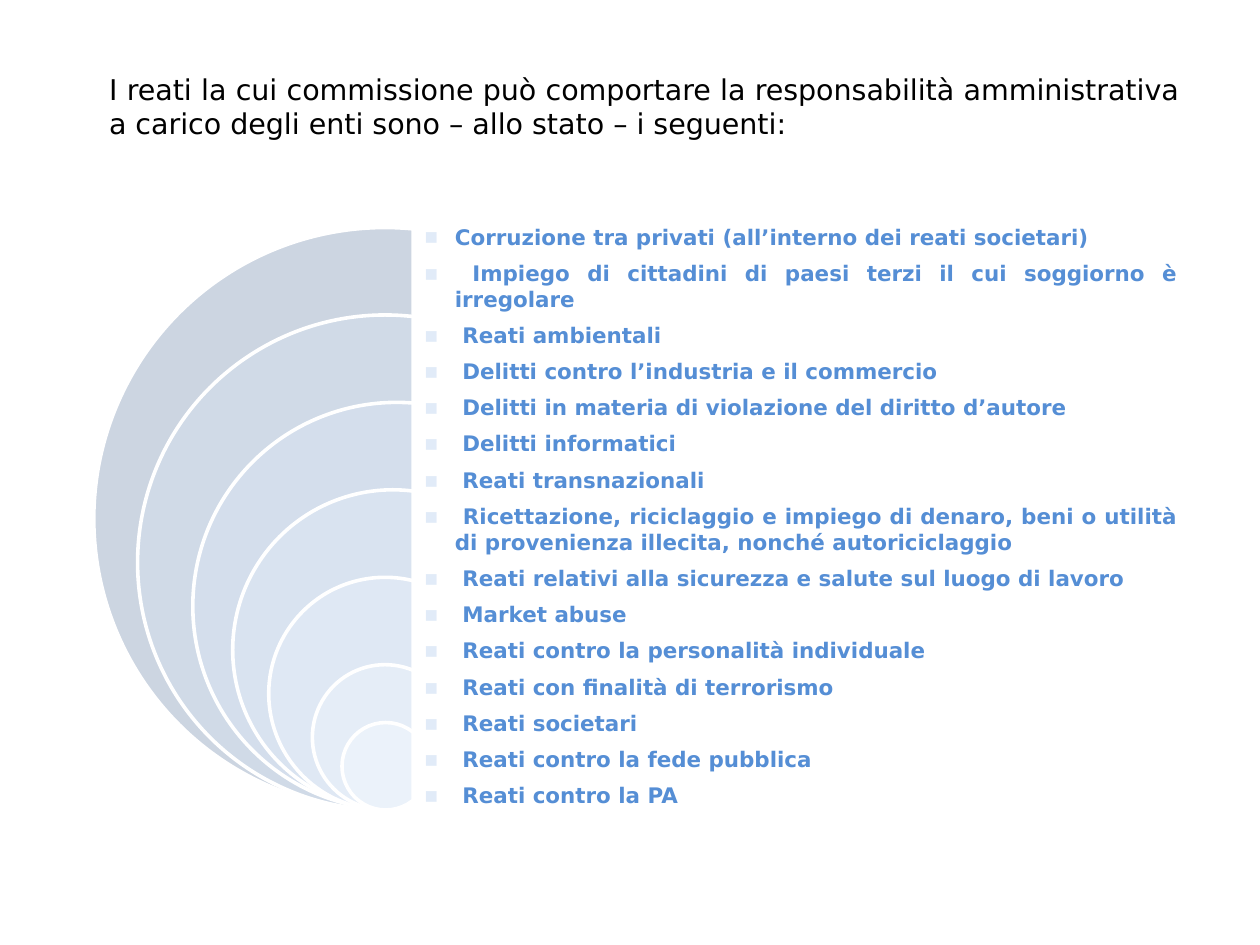
from typing import NamedTuple

from lxml.etree import SubElement
from pptx import Presentation
from pptx.dml.color import RGBColor
from pptx.enum.shapes import MSO_SHAPE
from pptx.enum.text import MSO_ANCHOR, MSO_AUTO_SIZE, PP_ALIGN
from pptx.oxml.ns import qn
from pptx.util import Emu, Pt

PX = 9144  # EMU in one px, 100 px to the inch
FONT = "DejaVu Sans"
BLACK = RGBColor(0x00, 0x00, 0x00)
WHITE = RGBColor(0xFF, 0xFF, 0xFF)
BLUE = RGBColor(0x55, 0x8E, 0xD5)
BULLET = RGBColor(0xE1, 0xEB, 0xF8)
BASE = 630  # all rings touch this line
INDENT = 24

TITLE = (
    "I reati la cui commissione può comportare la responsabilità "
    "amministrativa a carico degli enti sono – allo stato – i seguenti:"
)
CRIMES = (
    "Corruzione tra privati (all’interno dei reati societari)",
    " Impiego di cittadini di paesi terzi il cui soggiorno è irregolare",
    " Reati ambientali",
    " Delitti contro l’industria e il commercio",
    " Delitti in materia di violazione del diritto d’autore",
    " Delitti informatici",
    " Reati transnazionali",
    " Ricettazione, riciclaggio e impiego di denaro, beni o utilità "
    "di provenienza illecita, nonché autoriciclaggio",
    " Reati relativi alla sicurezza e salute sul luogo di lavoro",
    " Market abuse",
    " Reati contro la personalità individuale",
    " Reati con finalità di terrorismo",
    " Reati societari",
    " Reati contro la fede pubblica",
    " Reati contro la PA",
)


class Ring(NamedTuple):
    left: int
    size: int
    fill: RGBColor


RINGS = (
    Ring(73, 453, RGBColor(0xCC, 0xD5, 0xE1)),
    Ring(107, 385, RGBColor(0xD0, 0xDA, 0xE7)),
    Ring(150, 317, RGBColor(0xD4, 0xDE, 0xEC)),
    Ring(181, 249, RGBColor(0xD9, 0xE3, 0xF0)),
    Ring(209, 181, RGBColor(0xDF, 0xE8, 0xF4)),
    Ring(243, 113, RGBColor(0xE5, 0xED, 0xF7)),
    Ring(266, 68, RGBColor(0xEB, 0xF2, 0xFA)),
)


def px(*vals: int) -> list[Emu]:
    return [Emu(val * PX) for val in vals]


def draw_ring(group, ring: Ring) -> None:
    box = px(ring.left, BASE - ring.size, ring.size, ring.size)
    shape = group.shapes.add_shape(MSO_SHAPE.OVAL, *box)
    shape.shadow.inherit = False
    shape.fill.solid()
    shape.fill.fore_color.rgb = ring.fill
    shape.line.color.rgb = WHITE
    shape.line.width = Pt(2)


def set_frame(frame) -> None:
    frame.word_wrap = True
    frame.auto_size = MSO_AUTO_SIZE.SHAPE_TO_FIT_TEXT
    frame.vertical_anchor = MSO_ANCHOR.TOP


def add_text(para, text: str, size: int, color: RGBColor, bold: bool) -> None:
    para.alignment = PP_ALIGN.JUSTIFY
    run = para.add_run()
    run.text = text
    run.font.name = FONT
    run.font.size = Pt(size)
    run.font.bold = bold
    run.font.color.rgb = color


def add_bullet(para) -> None:
    """Give the paragraph a hanging square bullet."""
    props = para._p.get_or_add_pPr()
    props.set("marL", str(INDENT * PX))
    props.set("indent", str(-INDENT * PX))
    color = SubElement(props, qn("a:buClr"))
    SubElement(color, qn("a:srgbClr"), val=str(BULLET))
    SubElement(props, qn("a:buFont"), typeface=FONT)
    SubElement(props, qn("a:buChar"), char="▪")


def draw_title(slide) -> None:
    frame = slide.shapes.add_textbox(*px(75, 51, 853, 64)).text_frame
    set_frame(frame)
    add_text(frame.paragraphs[0], TITLE, 16, BLACK, False)


def draw_list(slide) -> None:
    panel = slide.shapes.add_shape(MSO_SHAPE.RECTANGLE, *px(320, 169, 606, 471))
    panel.shadow.inherit = False
    panel.fill.solid()
    panel.fill.fore_color.rgb = WHITE
    panel.line.fill.background()
    frame = panel.text_frame
    set_frame(frame)
    for num, crime in enumerate(CRIMES):
        para = frame.add_paragraph() if num else frame.paragraphs[0]
        add_bullet(para)
        para.space_after = Pt(5.9)
        add_text(para, crime, 12, BLUE, True)


def main() -> None:
    deck = Presentation()
    deck.slide_width, deck.slide_height = px(980, 735)
    slide = deck.slides.add_slide(deck.slide_layouts[6])
    draw_title(slide)
    group = slide.shapes.add_group_shape()
    for ring in RINGS:
        draw_ring(group, ring)
    draw_list(slide)
    deck.save("out.pptx")


if __name__ == "__main__":
    main()
